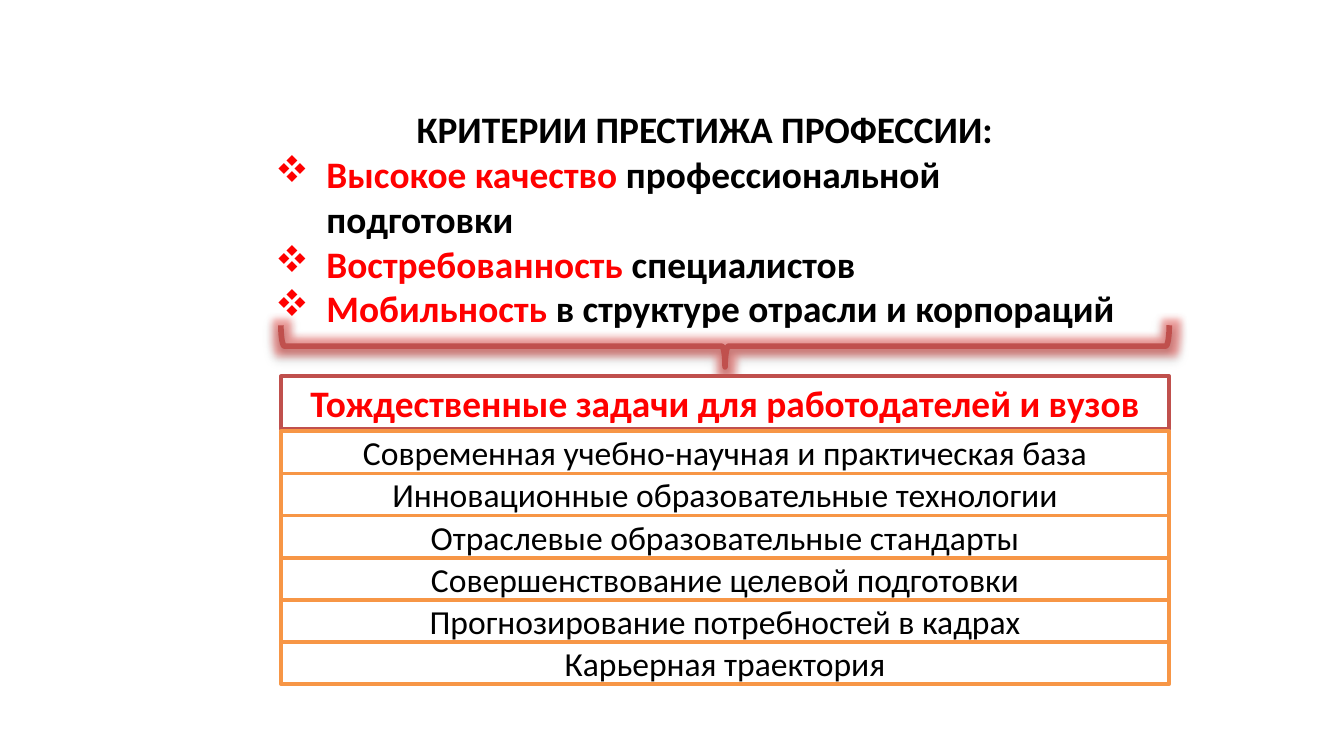
from dataclasses import dataclass
from lxml import etree
from pptx import Presentation
from pptx.dml.color import RGBColor
from pptx.enum.shapes import MSO_SHAPE
from pptx.enum.text import MSO_ANCHOR, PP_ALIGN
from pptx.oxml import parse_xml
from pptx.oxml.ns import nsdecls, qn
from pptx.util import Inches, Pt

RECTANGLE = MSO_SHAPE.RECTANGLE
LEFT_BRACE = MSO_SHAPE.LEFT_BRACE
MIDDLE = MSO_ANCHOR.MIDDLE
CENTER = PP_ALIGN.CENTER
LEFT = PP_ALIGN.LEFT


@dataclass(frozen=True)
class Theme:
    font: str = "Calibri"
    bullet_font: str = "Wingdings"
    white: str = "FFFFFF"
    black: str = "000000"
    accent: str = "FF0000"
    brick: str = "C0504D"
    orange: str = "F79646"
    heading_size: int = 20
    row_size: int = 18
    border: int = 2
    brace_line: int = 3
    bullet_indent: float = 0.38


@dataclass(frozen=True)
class Box:
    left: float
    top: float
    width: float
    height: float

    def row(self, index, count):
        pitch = self.height / count
        return Box(self.left, self.top + index * pitch, self.width, pitch)


THEME = Theme()
SLIDE_WIDTH = 10
SLIDE_HEIGHT = SLIDE_WIDTH * 9 / 16
CRITERIA_BOX = Box(1.95, 0.83, 6.59, 1.59)
BRACE_BOX = Box(2.09, 2.42, 6.61, 0.31)
HEADER_BOX = Box(2.09, 2.8, 6.61, 0.39)
TASKS_BOX = Box(2.09, 3.21, 6.61, 1.88)

CRITERIA_TITLE = "КРИТЕРИИ ПРЕСТИЖА ПРОФЕССИИ:"
CRITERIA = [
    ("Высокое качество ", "профессиональной подготовки"),
    ("Востребованность", " специалистов"),
    ("Мобильность ", "в структуре отрасли и корпораций"),
]
TASKS_TITLE = "Тождественные задачи для работодателей и вузов"
TASKS = [
    "Современная учебно-научная и практическая база",
    "Инновационные образовательные технологии",
    "Отраслевые образовательные стандарты",
    "Совершенствование целевой подготовки",
    "Прогнозирование потребностей в кадрах",
    "Карьерная траектория",
]


def color(value):
    return RGBColor.from_string(value)


def style_paragraph(paragraph, size, bold=False, text_color=None, alignment=CENTER):
    paragraph.alignment = alignment
    paragraph.font.name = THEME.font
    paragraph.font.size = Pt(size)
    paragraph.font.bold = bold
    if text_color:
        paragraph.font.color.rgb = color(text_color)


def add_panel(slide, box, border_color):
    shape = slide.shapes.add_shape(
        RECTANGLE, Inches(box.left), Inches(box.top), Inches(box.width), Inches(box.height)
    )
    shape.shadow.inherit = False
    shape.fill.solid()
    shape.fill.fore_color.rgb = color(THEME.white)
    shape.line.color.rgb = color(border_color)
    shape.line.width = Pt(THEME.border)
    shape.text_frame.word_wrap = True
    shape.text_frame.vertical_anchor = MIDDLE
    return shape.text_frame


def add_label(slide, box, border_color, text, size, text_color, bold=False):
    paragraph = add_panel(slide, box, border_color).paragraphs[0]
    paragraph.text = text
    style_paragraph(paragraph, size, bold, text_color)


def add_bullet(paragraph):
    properties = paragraph._p.get_or_add_pPr()
    properties.set("marL", str(Inches(THEME.bullet_indent)))
    properties.set("indent", str(-Inches(THEME.bullet_indent)))
    bullet_color = etree.SubElement(properties, qn("a:buClr"))
    etree.SubElement(bullet_color, qn("a:srgbClr"), val=THEME.accent)
    etree.SubElement(properties, qn("a:buFont"), typeface=THEME.bullet_font, charset="2")
    etree.SubElement(properties, qn("a:buChar"), char="v")


def add_criteria(slide, box):
    frame = add_panel(slide, box, THEME.white)
    title = frame.paragraphs[0]
    title.text = CRITERIA_TITLE
    style_paragraph(title, THEME.heading_size, True, THEME.black)
    for criterion in CRITERIA:
        paragraph = frame.add_paragraph()
        add_bullet(paragraph)
        style_paragraph(paragraph, THEME.heading_size, True, alignment=LEFT)
        for text, text_color in zip(criterion, (THEME.accent, THEME.black)):
            run = paragraph.add_run()
            run.text = text
            run.font.color.rgb = color(text_color)


def add_brace(slide, box):
    left = box.left + (box.width - box.height) / 2
    top = box.top - (box.width - box.height) / 2
    brace = slide.shapes.add_shape(
        LEFT_BRACE, Inches(left), Inches(top), Inches(box.height), Inches(box.width)
    )
    brace.rotation = 270
    brace.fill.background()
    brace.line.color.rgb = color(THEME.brick)
    brace.line.width = Pt(THEME.brace_line)
    brace.shadow.inherit = False
    effects = brace._element.spPr.find(qn("a:effectLst"))
    effects.append(parse_xml(
        f'<a:glow {nsdecls("a")} rad="{Pt(8)}"><a:srgbClr val="{THEME.brick}">'
        '<a:satMod val="175000"/><a:alpha val="40000"/></a:srgbClr></a:glow>'
    ))
    effects.append(parse_xml(
        f'<a:outerShdw {nsdecls("a")} blurRad="{Pt(3.1)}" dist="{Pt(1.8)}" dir="5400000" '
        f'rotWithShape="0"><a:srgbClr val="{THEME.black}">'
        '<a:alpha val="35000"/></a:srgbClr></a:outerShdw>'
    ))


def add_tasks(slide, header_box, rows_box):
    add_label(slide, header_box, THEME.brick, TASKS_TITLE,
              THEME.heading_size, THEME.accent, True)
    for index, task in enumerate(TASKS):
        add_label(slide, rows_box.row(index, len(TASKS)), THEME.orange, task,
                  THEME.row_size, THEME.black)


def main():
    presentation = Presentation()
    presentation.slide_width = Inches(SLIDE_WIDTH)
    presentation.slide_height = Inches(SLIDE_HEIGHT)
    slide = presentation.slides.add_slide(presentation.slide_layouts[6])
    add_criteria(slide, CRITERIA_BOX)
    add_brace(slide, BRACE_BOX)
    add_tasks(slide, HEADER_BOX, TASKS_BOX)
    presentation.save("out.pptx")


if __name__ == "__main__":
    main()
